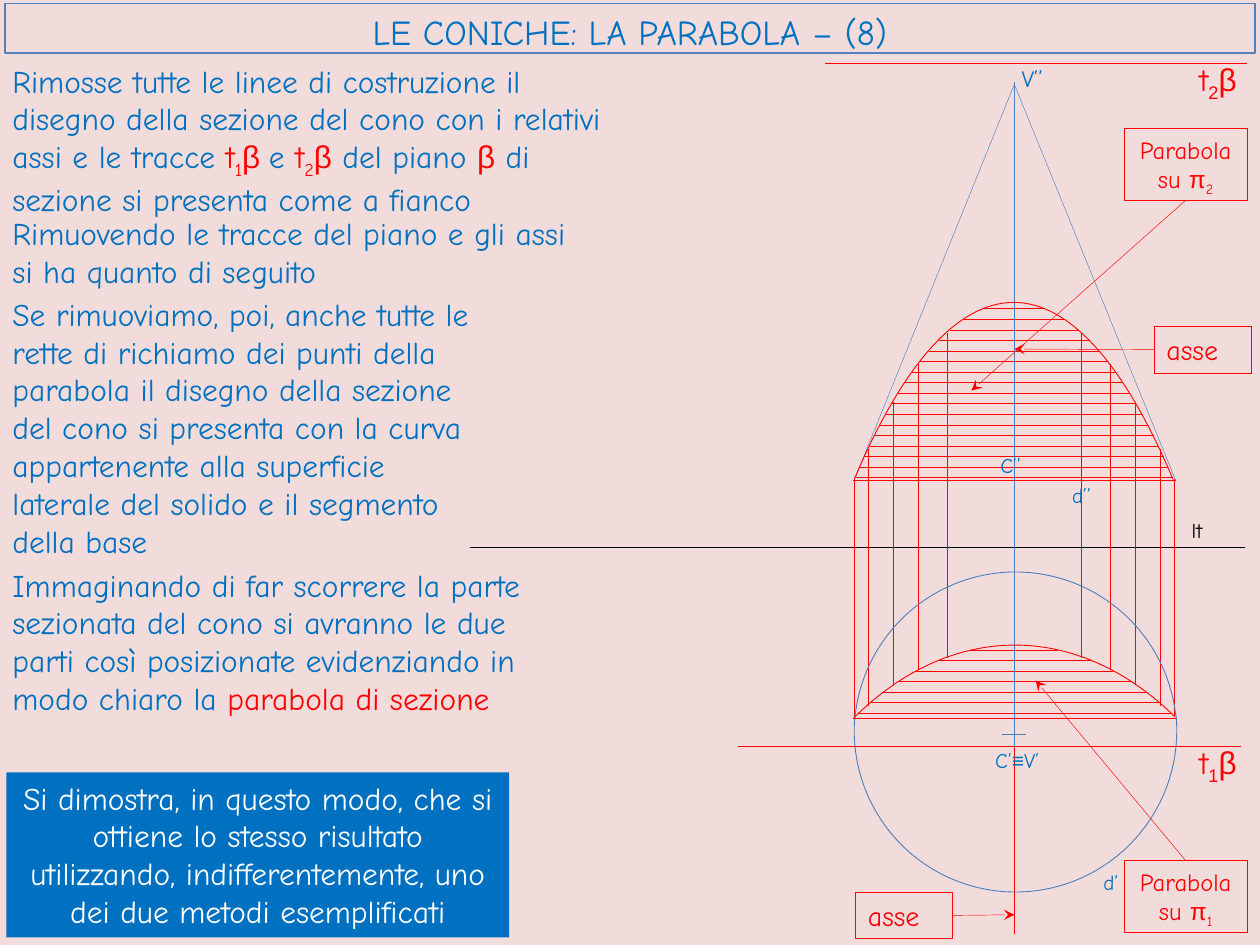
from math import sqrt

from lxml import etree
from pptx import Presentation
from pptx.dml.color import RGBColor
from pptx.enum import dml, shapes, text
from pptx.oxml import ns
from pptx.util import Inches, Pt

COLORS = {"paper": "F2DCDB", "blue": "0070C0", "outline": "4B7EBC", "frame": "4F81BD",
          "red": "FF0000", "black": "000000", "white": "FFFFFF"}
HAND, GREEK = "Comic Neue", "Arial"
RGB = {name: RGBColor.from_string(value) for name, value in COLORS.items()}

deck = Presentation()
deck.slide_width, deck.slide_height = Inches(10), Inches(7.5)
page = deck.slides.add_slide(deck.slide_layouts[5])
page.background.fill.solid()
page.background.fill.fore_color.rgb = RGB["paper"]


def draw_line(x1, y1, x2, y2, color="red", width=0.25, arrow=False):
    line = page.shapes.add_connector(shapes.MSO_CONNECTOR.STRAIGHT,
                                     Inches(x1), Inches(y1), Inches(x2), Inches(y2))
    line.line.color.rgb = RGB[color]
    line.line.width = Pt(width)
    if arrow:
        etree.SubElement(line.line._get_or_add_ln(), ns.qn("a:tailEnd"), type="stealth")
    etree.SubElement(line._element.spPr, ns.qn("a:effectLst"))
    return line


def write(box, size, color, spans, align=text.PP_ALIGN.LEFT):
    """Fill a box with one paragraph; a span is (text, font, colour, is subscript)."""
    frame = box.text_frame
    frame.word_wrap = True
    frame.vertical_anchor = text.MSO_ANCHOR.TOP
    para = frame.paragraphs[0]
    para.alignment = align
    para.font.size = Pt(size)
    para.font.name = HAND
    para.font.color.rgb = RGB[color]
    for words, font, ink, subscript in spans:
        span = para.add_run()
        span.text = words
        if font != HAND:
            span.font.name = font
        if ink != color:
            span.font.color.rgb = RGB[ink]
        if subscript:
            span.font._element.set("baseline", "-25000")


# Title
title = page.shapes.title
title.left, title.top, title.width, title.height = (Inches(v) for v in (0.04, 0.03, 9.92, 0.39))
title.line.color.rgb = RGB["frame"]
title.line.width = Pt(0.75)
write(title, 20, "blue", [("LE CONICHE: LA PARABOLA – (8)", HAND, "blue", False)],
      text.PP_ALIGN.CENTER)

# Ground line, traces of the plane and axes
draw_line(3.73, 4.34, 9.88, 4.34, "black")
draw_line(5.86, 5.92, 9.85, 5.92)
draw_line(6.55, 0.5, 9.9, 0.5)
draw_line(8.05, 5.11, 8.05, 7.41)
draw_line(8.05, 2.41, 8.05, 4.35)

# Projection lines, mirrored about the axis
AXIS = 8.05
for offset, top, bottom in [(0.53, 2.64, 5.22), (0.76, 2.89, 5.32), (0.96, 3.19, 5.44),
                            (1.16, 3.56, 5.6), (1.27, 3.8, 5.69)]:
    for x in (AXIS - offset, AXIS + offset):
        draw_line(x, top, x, bottom)

# Hatching: chords of the two section curves (left, top, width, height)
PARABOLA_2 = (5.37, 2.4, 5.35, 23.62)
PARABOLA_1 = (5.73, 5.12, 4.65, 7.01)
for curve, first, last, count in [(PARABOLA_2, 2.45, 3.79, 17), (PARABOLA_1, 5.16, 5.66, 7)]:
    left, top, width, height = curve
    for i in range(count):
        y = first + (last - first) * i / (count - 1)
        half = width / 2 * sqrt(1 - (1 - (y - top) / (height / 2)) ** 2)
        draw_line(AXIS - half, y, AXIS + half, y)

# Cone
draw_line(6.78, 3.81, 9.33, 3.81, "outline", 0.5)
for x in (6.78, 9.33):
    draw_line(AXIS, 0.67, x, 3.81, "outline")
draw_line(AXIS, 0.65, AXIS, 5.82, "outline")
draw_line(AXIS, 5.73, AXIS, 5.93, "outline")
draw_line(7.95, 5.83, 8.14, 5.83, "outline")

# Base circle halves and section curves
for place, start, end, color in [((6.78, 4.54, 2.56, 2.56), 111.66, 212.31, "outline"),
                                 ((6.78, 4.52, 2.56, 2.56), 212.59, 111.58, "outline"),
                                 (PARABOLA_1, 147.79, 176, "red"),
                                 (PARABOLA_2, 157.84, 166.16, "red")]:
    arc = page.shapes.add_shape(shapes.MSO_SHAPE.ARC, *(Inches(v) for v in place))
    arc.shadow.inherit = False
    arc.adjustments[0], arc.adjustments[1] = start, end
    arc.fill.background()
    arc.line.color.rgb = RGB[color]
    arc.line.width = Pt(0.5)
draw_line(6.8, 5.7, 9.34, 5.7)
draw_line(6.77, 5.7, 9.32, 5.7, width=0.5).line.dash_style = dml.MSO_LINE.DASH
draw_line(6.77, 3.81, 9.33, 3.81, width=0.5)

# Explanations on the left and letters on the drawing
trace = {n: [("t", HAND, "red", False), (n, HAND, "red", True)] for n in "12"}
labels = [
    ((0, 0.44, 5.04, 1.31), 18, "blue", [
        ("Rimosse tutte le linee di costruzione il disegno della sezione del cono "
         "con i relativi assi e le tracce ", HAND, "blue", False),
        *trace["1"], ("β ", GREEK, "red", False), ("e ", HAND, "blue", False),
        *trace["2"], ("β", GREEK, "red", False), (" del piano ", HAND, "blue", False),
        ("β", GREEK, "red", False),
        (" di sezione si presenta come a fianco", HAND, "blue", False)]),
    ((0, 1.65, 4.72, 0.71), 18, "blue", [
        ("Rimuovendo le tracce del piano e gli assi si ha quanto di seguito",
         HAND, "blue", False)]),
    ((0, 2.29, 3.87, 2.22), 18, "blue", [
        ("Se rimuoviamo, poi, anche tutte le rette di richiamo dei punti della parabola "
         "il disegno della sezione del cono si presenta con la curva appartenente alla "
         "superficie laterale del solido e il segmento della base", HAND, "blue", False)]),
    ((0, 4.44, 4.25, 1.62), 18, "blue", [
        ("Immaginando di far scorrere la parte sezionata del cono si avranno le due parti "
         "così posizionate evidenziando in modo chiaro la ", HAND, "blue", False),
        ("parabola di sezione", HAND, "red", False)]),
    ((9.36, 4.06, 0.38, 0.3), 12, "black", [("lt", HAND, "black", False)]),
    ((8.66, 6.85, 0.36, 0.3), 12, "blue", [("d’", HAND, "blue", False)]),
    ((7.8, 5.88, 0.59, 0.28), 12, "blue", [
        ("C’", HAND, "blue", False), ("≡", GREEK, "blue", False), ("V’", HAND, "blue", False)]),
    ((8.41, 3.78, 0.38, 0.3), 12, "blue", [("d’’", HAND, "blue", False)]),
    ((7.84, 3.54, 0.52, 0.3), 12, "blue", [("C’’", HAND, "blue", False)]),
    ((8.01, 0.46, 0.52, 0.33), 13.5, "blue", [("V’’", HAND, "blue", False)]),
]
for number, top in [("2", 0.43), ("1", 5.85)]:
    labels.append(((9.42, top, 0.58, 0.4), 18, "red", [
        ("t", HAND, "red", False), (number, GREEK, "red", True), ("β", GREEK, "red", False)]))
for place, size, color, spans in labels:
    box = page.shapes.add_textbox(*(Inches(v) for v in place))
    if place[2] < 1:
        box.text_frame.margin_right = 0
    write(box, size, color, spans)

# Framed callouts, each joined to an arrow: side of the frame, then arrow tip
axis_name = [("asse", HAND, "red", False)]
curve_name = {n: [("Parabola su ", HAND, "red", False), ("π", GREEK, "red", False),
                  (n, HAND, "red", True)] for n in "12"}
LEFT, CENTER = text.PP_ALIGN.LEFT, text.PP_ALIGN.CENTER
for place, size, spans, align, side, tip in [
        ((9.16, 2.59, 0.77, 0.37), 16, axis_name, LEFT, 1, (AXIS, 2.77)),
        ((6.79, 7.08, 0.77, 0.37), 16, axis_name, LEFT, 3, (AXIS, 7.26)),
        ((8.92, 1.02, 0.98, 0.57), 14, curve_name["2"], CENTER, 2, (7.71, 3.1)),
        ((8.92, 6.83, 0.98, 0.57), 14, curve_name["1"], CENTER, 0, (8.22, 5.4))]:
    callout = page.shapes.add_shape(shapes.MSO_SHAPE.RECTANGLE, *(Inches(v) for v in place))
    callout.shadow.inherit = False
    callout.fill.background()
    callout.line.color.rgb = RGB["red"]
    callout.line.width = Pt(0.25)
    write(callout, size, "red", spans, align)
    draw_line(place[0], place[1], *tip, arrow=True).begin_connect(callout, side)

# Conclusion
conclusion = page.shapes.add_shape(shapes.MSO_SHAPE.RECTANGLE,
                                   Inches(0.05), Inches(6.13), Inches(3.99), Inches(1.31))
conclusion.shadow.inherit = False
conclusion.fill.solid()
conclusion.fill.fore_color.rgb = RGB["blue"]
conclusion.line.fill.background()
write(conclusion, 18, "white", [
    ("Si dimostra, in questo modo, che si ottiene lo stesso risultato utilizzando, "
     "indifferentemente, uno dei due metodi esemplificati", HAND, "white", False)], CENTER)

deck.save("out.pptx")
